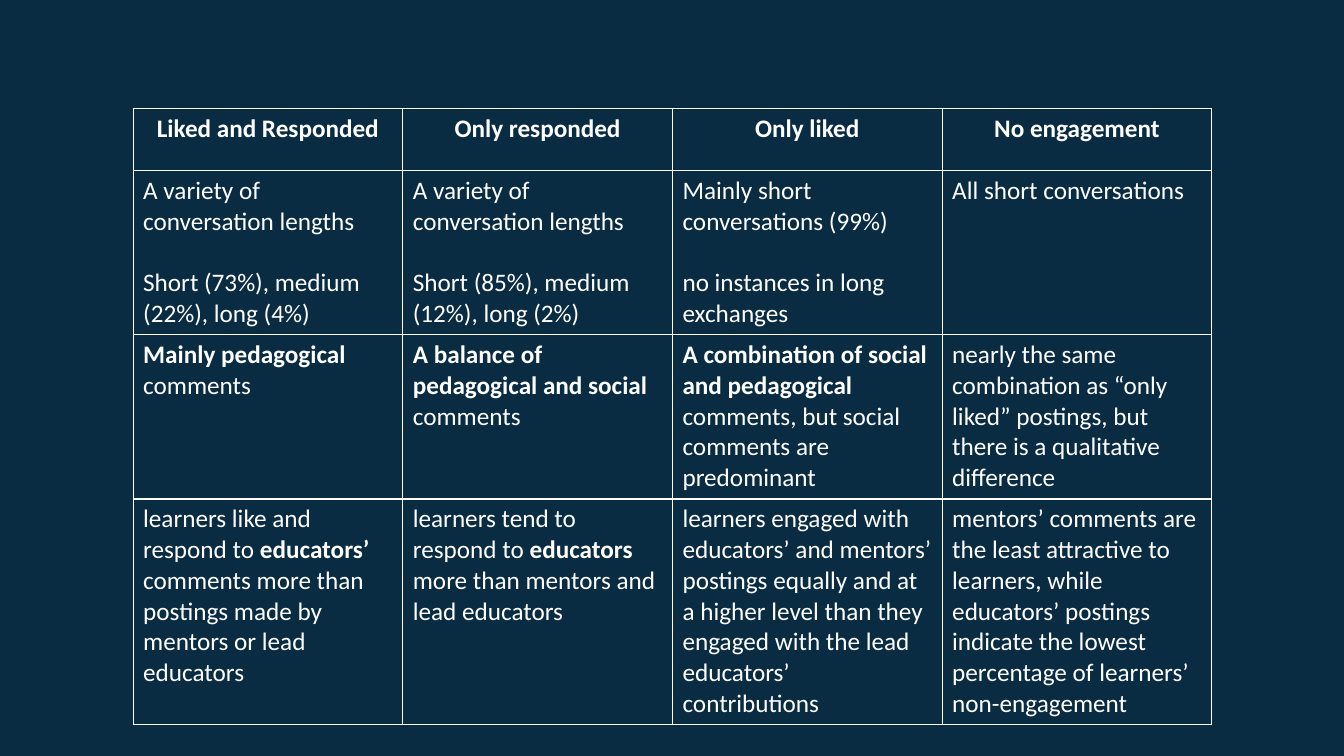
from lxml import etree
from pptx import Presentation
from pptx.dml.color import RGBColor
from pptx.enum.text import PP_ALIGN
from pptx.oxml.ns import qn
from pptx.util import Inches, Pt

NAVY = RGBColor(0x09, 0x2C, 0x43)
WHITE = RGBColor(0xFF, 0xFF, 0xFF)
CENTER = PP_ALIGN.CENTER
LEFT = PP_ALIGN.LEFT

COLUMN_WIDTH = 2.675
ROW_HEIGHTS = [0.61, 1.63, 1.63, 2.23]
PARAGRAPH_GAP = Pt(22)

# Each cell is a list of paragraphs; ** switches bold on and off.
ROWS = [
    [
        ["**Liked and Responded**"],
        ["**Only responded**"],
        ["**Only liked**"],
        ["**No engagement**"],
    ],
    [
        ["A variety of conversation lengths", "Short (73%), medium (22%), long (4%)"],
        ["A variety of conversation lengths", "Short (85%), medium (12%), long (2%)"],
        ["Mainly short conversations (99%)", "no instances in long exchanges"],
        ["All short conversations"],
    ],
    [
        ["**Mainly pedagogical **comments"],
        ["**A balance of pedagogical and social **comments"],
        ["**A combination of social and pedagogical **"
         "comments, but social comments are predominant"],
        ["nearly the same combination as “only liked” postings, "
         "but there is a qualitative difference"],
    ],
    [
        ["learners like and respond to **educators’** comments more than "
         "postings made by mentors or lead educators"],
        ["learners tend to respond to **educators **more than mentors and lead educators"],
        ["learners engaged with educators’ and mentors’ postings equally and at a higher "
         "level than they engaged with the lead educators’ contributions"],
        ["mentors’ comments are the least attractive to learners, while educators’ postings "
         "indicate the lowest percentage of learners’ non-engagement"],
    ],
]


def style_cell(cell):
    """Give the cell thin white borders and the slide's background colour."""
    properties = cell._tc.get_or_add_tcPr()
    for side in ("a:lnL", "a:lnR", "a:lnT", "a:lnB"):
        line = etree.SubElement(properties, qn(side), w=str(Pt(1)))
        line_fill = etree.SubElement(line, qn("a:solidFill"))
        etree.SubElement(line_fill, qn("a:srgbClr"), val=str(WHITE))
    cell.fill.solid()
    cell.fill.fore_color.rgb = NAVY


def write_paragraph(paragraph, marked_text):
    for index, part in enumerate(marked_text.split("**")):
        if part:
            run = paragraph.add_run()
            run.text = part
            run.font.name = "Calibri"
            run.font.size = Pt(18)
            run.font.bold = index % 2 == 1
            run.font.color.rgb = WHITE


presentation = Presentation()
presentation.slide_width = Inches(13.33)
presentation.slide_height = Inches(7.5)
slide = presentation.slides.add_slide(presentation.slide_layouts[6])
slide.background.fill.solid()
slide.background.fill.fore_color.rgb = NAVY

table = slide.shapes.add_table(
    len(ROWS), len(ROWS[0]), Inches(1.32), Inches(1.08),
    Inches(COLUMN_WIDTH * len(ROWS[0])), Inches(sum(ROW_HEIGHTS)),
).table
table.horz_banding = False
for column in table.columns:
    column.width = Inches(COLUMN_WIDTH)

for row_index, (height, row) in enumerate(zip(ROW_HEIGHTS, ROWS)):
    table.rows[row_index].height = Inches(height)
    for column_index, cell_paragraphs in enumerate(row):
        cell = table.cell(row_index, column_index)
        style_cell(cell)
        text_frame = cell.text_frame
        for index, marked_text in enumerate(cell_paragraphs):
            if index == 0:
                paragraph = text_frame.paragraphs[0]
            else:
                paragraph = text_frame.add_paragraph()
                paragraph.space_before = PARAGRAPH_GAP
            paragraph.alignment = CENTER if row_index == 0 else LEFT
            write_paragraph(paragraph, marked_text)

presentation.save("out.pptx")
